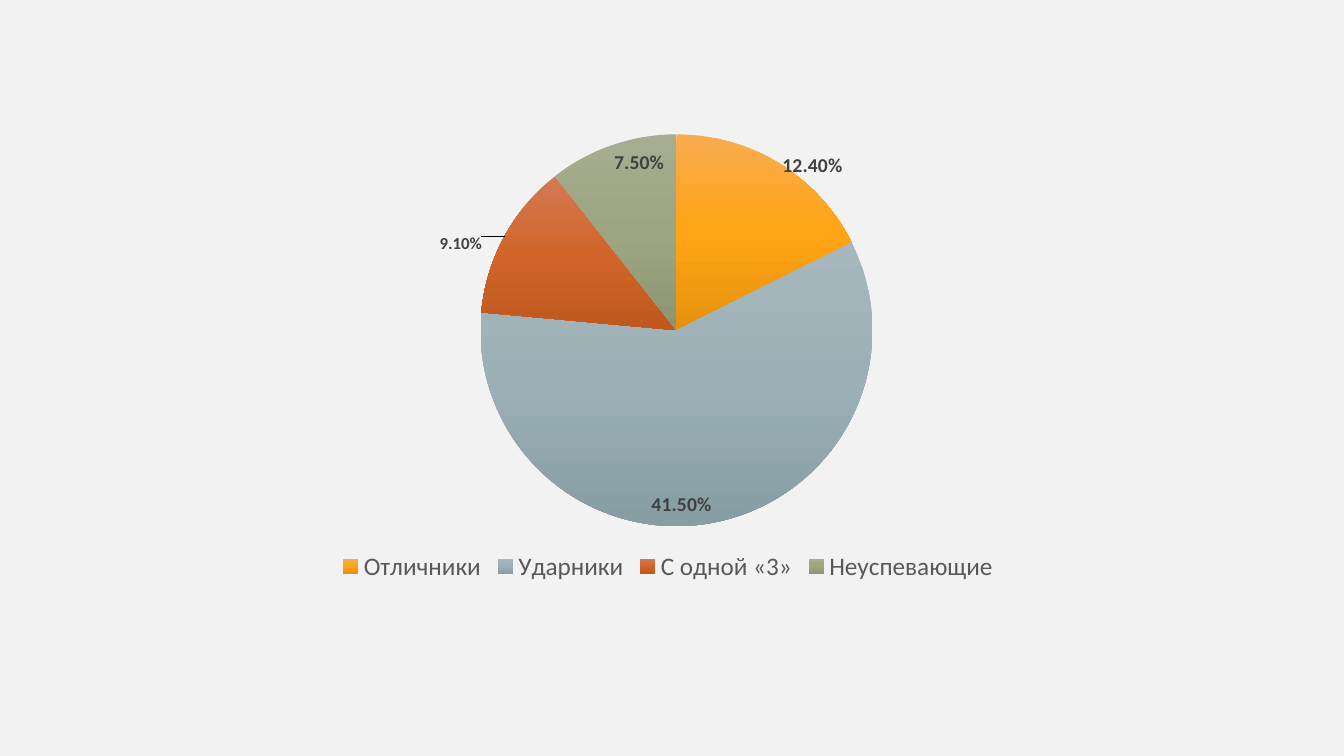
from copy import deepcopy
from pptx import Presentation
from pptx.chart.data import CategoryChartData
from pptx.dml.color import RGBColor
from pptx.enum.chart import XL_CHART_TYPE, XL_LABEL_POSITION, XL_LEGEND_POSITION
from pptx.oxml import parse_xml
from pptx.oxml.ns import nsdecls, qn
from pptx.util import Inches, Pt


def color(code):
    return RGBColor.from_string(code)


def style(font, size, code, bold=False):
    font.name = "Calibri"
    font.size = Pt(size)
    font.bold = bold
    font.color.rgb = color(code)


def layout(inner):
    return parse_xml(f"<c:layout {nsdecls('c')}><c:manualLayout>{inner}"
                     "</c:manualLayout></c:layout>")


INSIDE, OUTSIDE = XL_LABEL_POSITION.INSIDE_END, XL_LABEL_POSITION.OUTSIDE_END

# Name, share, gradient, label size, label place, label shift in chart fractions
groups = [
    ("Отличники", 0.124, ("FAAC4F", "FFA414", "E5920F"), 14, OUTSIDE, (0, 0.04)),
    ("Ударники", 0.415, ("A6B8BD", "9AB0B6", "879DA4"), 14, INSIDE, None),
    ("С одной «3»", 0.091, ("D37955", "D16529", "C0581E"), 12, OUTSIDE, (-0.02, 0.04)),
    ("Неуспевающие", 0.075, ("A7AD91", "9DA581", "8C9471"), 14, INSIDE, None),
]

# Slide
deck = Presentation()
deck.slide_width, deck.slide_height = Inches(13.33), Inches(7.5)
slide = deck.slides.add_slide(deck.slide_layouts[6])
slide.background.fill.solid()
slide.background.fill.fore_color.rgb = color("F2F2F2")

# Pie chart
data = CategoryChartData(number_format="0.00%")
data.categories = [group[0] for group in groups]
data.add_series("Series 1", [group[1] for group in groups])
chart = slide.shapes.add_chart(
    XL_CHART_TYPE.PIE, Inches(2.4), Inches(0.93), Inches(8.45), Inches(4.89), data).chart
style(chart.font, 10, "000000")
chart.has_title = False
plot = chart.plots[0]
plot.vary_by_categories = True

# Plot area
area = chart._chartSpace.find(".//" + qn("c:plotArea"))
for old in area.findall(qn("c:layout")):
    area.remove(old)
area.insert(0, layout(
    '<c:layoutTarget val="inner"/><c:xMode val="edge"/><c:yMode val="edge"/>'
    '<c:x val="0.28"/><c:y val="0.08"/><c:w val="0.46"/><c:h val="0.8"/>'))

# Legend
chart.has_legend = True
chart.legend.position = XL_LEGEND_POSITION.BOTTOM
chart.legend.include_in_layout = False
style(chart.legend.font, 18, "595959")

# Shared label format
series = plot.series[0]
labels = series.data_labels
labels.show_value = True
labels.number_format = "0.00%"
labels.number_format_is_linked = False
style(labels.font, 9, "404040", bold=True)
lead = labels._element.find(qn("c:showLeaderLines"))
if lead is not None:
    lead.set("val", "1")

# Slices and their labels
for i, (name, share, shades, size, place, shift) in enumerate(groups):
    point = series.points[i]
    fill = point.format.fill
    fill.gradient()
    fill.gradient_angle = 270
    stops = list(chart._chartSpace.iter(qn("a:gsLst")))[-1]
    stops.insert(1, deepcopy(stops[0]))
    for stop, shade, spot in zip(fill.gradient_stops, shades, (0, 0.5, 1)):
        stop.color.rgb = color(shade)
        stop.position = spot
    label = point.data_label
    style(label.font, size, "404040", bold=True)
    label.position = place
    if shift:
        tag = labels._element.findall(qn("c:dLbl"))[i]
        tag.insert(1, layout(f'<c:x val="{shift[0]}"/><c:y val="{shift[1]}"/>'))

deck.save("out.pptx")
